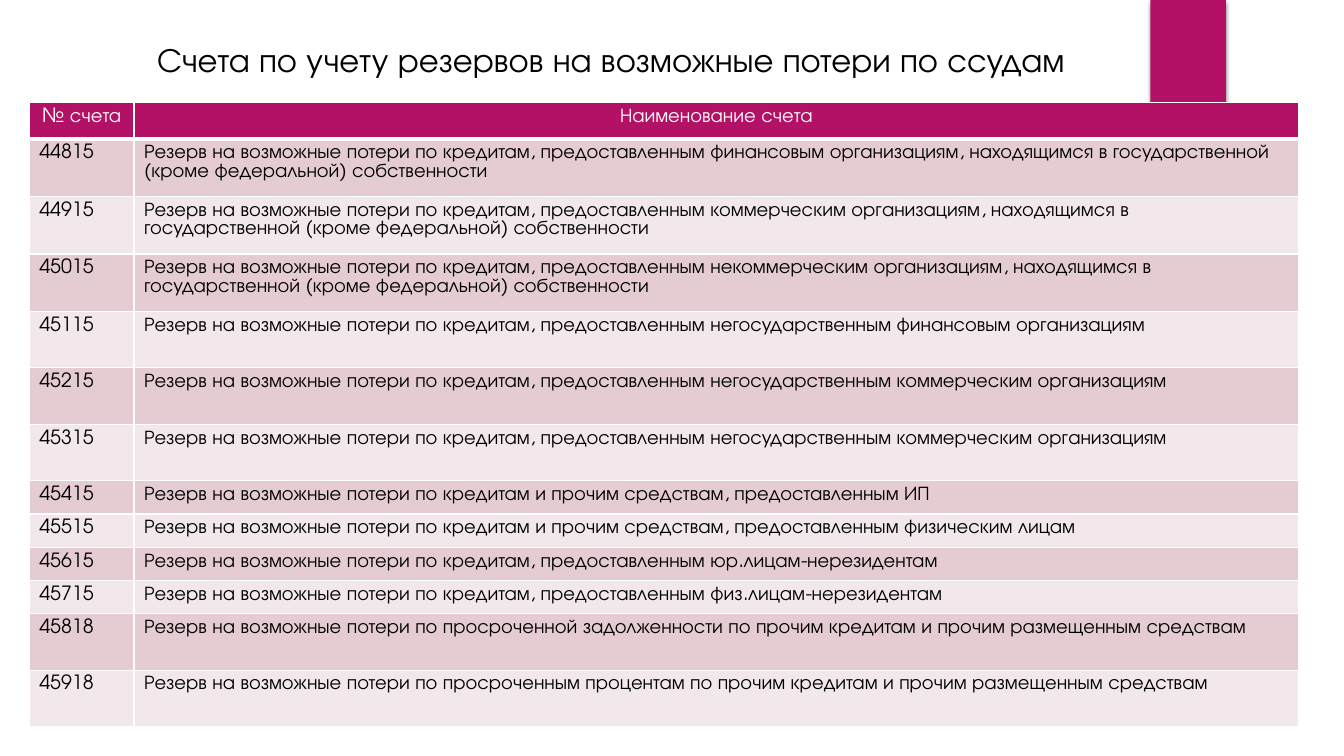
from dataclasses import dataclass

from lxml.etree import SubElement
from pptx import Presentation
from pptx.dml.color import RGBColor as RGB
from pptx.enum.shapes import MSO_SHAPE as Shape
from pptx.enum.text import MSO_ANCHOR as Anchor, PP_ALIGN as Align
from pptx.oxml import parse_xml
from pptx.oxml.ns import nsdecls, qn
from pptx.util import Inches, Pt


@dataclass(frozen=True)
class Theme:
    """Colours, font and type sizes of the slide."""
    font: str = "TeX Gyre Adventor"
    accent: str = "B31166"
    bands: tuple = ("E5CCD3", "F2E7EA")
    ink: str = "000000"
    paper: str = "FFFFFF"
    title: float = 24
    body: float = 14
    leading: float = 13.2


THEME = Theme()
TITLE = "Счета по учету резервов на возможные потери по ссудам"
HEADER = ("№ счета", "Наименование счета")
CREDITS = "Резерв на возможные потери по кредитам, предоставленным "
FUNDS = "Резерв на возможные потери по кредитам и прочим средствам, предоставленным "
OVERDUE = "Резерв на возможные потери по просроченн"
STATE = " организациям, находящимся в государственной (кроме федеральной) собственности"
PRIVATE = "негосударственным {} организациям"
PLACED = " по прочим кредитам и прочим размещенным средствам"
HEAD, WRAPPED, TALL, LOW = 0.36, 0.57, 0.56, 0.33
ACCOUNTS = [
    ("44815", CREDITS + "финансовым" + STATE, WRAPPED),
    ("44915", CREDITS + "коммерческим" + STATE, WRAPPED),
    ("45015", CREDITS + "некоммерческим" + STATE, WRAPPED),
    ("45115", CREDITS + PRIVATE.format("финансовым"), TALL),
    ("45215", CREDITS + PRIVATE.format("коммерческим"), TALL),
    ("45315", CREDITS + PRIVATE.format("коммерческим"), TALL),
    ("45415", FUNDS + "ИП", LOW),
    ("45515", FUNDS + "физическим лицам", LOW),
    ("45615", CREDITS + "юр.лицам-нерезидентам", LOW),
    ("45715", CREDITS + "физ.лицам-нерезидентам", LOW),
    ("45818", OVERDUE + "ой задолженности" + PLACED, TALL),
    ("45918", OVERDUE + "ым процентам" + PLACED, TALL),
]


def style(p, size, color, align):
    """Format one paragraph."""
    p.alignment = align
    p.font.name = THEME.font
    p.font.size = Pt(size)
    p.font.bold = False
    p.font.color.rgb = RGB.from_string(color)


def add_bar(s, box):
    """Draw the accent bar with its soft shadow."""
    sp = s.shapes.add_shape(Shape.RECTANGLE, *map(Inches, box))
    sp.fill.solid()
    sp.fill.fore_color.rgb = RGB.from_string(THEME.accent)
    sp.line.fill.background()
    sp._element.spPr.append(parse_xml(
        f'<a:effectLst {nsdecls("a")}><a:outerShdw blurRad="{Pt(3)}" dist="{Pt(2)}" '
        'dir="5400000" rotWithShape="0"><a:srgbClr val="000000"><a:alpha val="45000"/>'
        '</a:srgbClr></a:outerShdw></a:effectLst>'))


def add_title(s, box):
    """Place and fill the title placeholder."""
    sp = s.shapes.title
    sp.left, sp.top, sp.width, sp.height = map(Inches, box)
    tf = sp.text_frame
    tf.text = TITLE
    tf.word_wrap = True
    tf.vertical_anchor = Anchor.TOP
    style(tf.paragraphs[0], THEME.title, THEME.ink, Align.CENTER)


def add_borders(cell, bottom):
    """Give a cell white borders with the given bottom width."""
    tcPr = cell._tc.get_or_add_tcPr()
    for side, width in zip("LRTB", (1, 1, 1, bottom)):
        ln = SubElement(tcPr, qn(f"a:ln{side}"), w=str(Pt(width)))
        SubElement(SubElement(ln, qn("a:solidFill")), qn("a:srgbClr"), val=THEME.paper)


def fill_cell(cell, text, fill, color, align, bottom=1):
    """Write and format one table cell."""
    add_borders(cell, bottom)
    cell.fill.solid()
    cell.fill.fore_color.rgb = RGB.from_string(fill)
    cell.text = text
    p = cell.text_frame.paragraphs[0]
    p.line_spacing = Pt(THEME.leading)
    style(p, THEME.body, color, align)


def add_accounts(s, box, number_width):
    """Build the account table inside the box."""
    table = s.shapes.add_table(len(ACCOUNTS) + 1, 2, *map(Inches, box)).table
    table.columns[0].width = Inches(number_width)
    table.columns[1].width = Inches(box[2] - number_width)
    table.rows[0].height = Inches(HEAD)
    for cell, text in zip(table.rows[0].cells, HEADER):
        fill_cell(cell, text, THEME.accent, THEME.paper, Align.CENTER, 3)
    for i, (number, name, height) in enumerate(ACCOUNTS):
        row = table.rows[i + 1]
        row.height = Inches(height)
        for cell, text in zip(row.cells, (number, name)):
            fill_cell(cell, text, THEME.bands[i % 2], THEME.ink, Align.LEFT)


def main():
    """Build and save the slide."""
    prs = Presentation()
    prs.slide_width, prs.slide_height = Inches(13.33), Inches(7.5)
    s = prs.slides.add_slide(prs.slide_layouts[5])
    add_bar(s, (11.41, 0, 0.75, 1.25))
    add_accounts(s, (0.29, 1.02, 12.59, 6.19), 1.04)
    add_title(s, (0.74, 0.34, 10.64, 0.5))
    prs.save("out.pptx")


if __name__ == "__main__":
    main()
